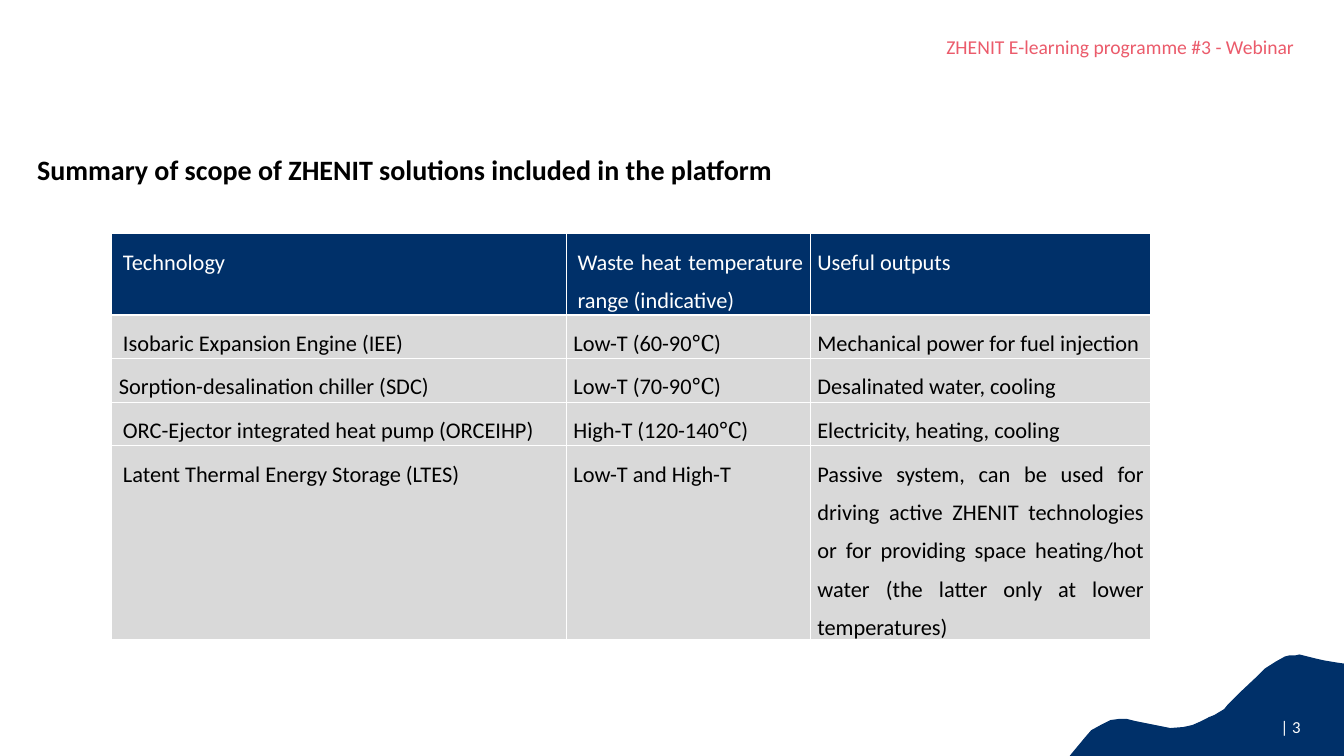
from dataclasses import dataclass

from lxml.etree import SubElement
from pptx import Presentation
from pptx.dml.color import RGBColor as Rgb
from pptx.enum.text import MSO_ANCHOR as Anchor, MSO_AUTO_SIZE as Auto, PP_ALIGN as Align
from pptx.oxml.ns import qn
from pptx.util import Inches, Pt

HUES = {"navy": "003069", "coral": "EB5B6B", "grey": "D9D9D9", "white": "FFFFFF", "black": "000000"}
WIDE, HIGH = Inches(40 / 3), Inches(7.5)
UNIT = HIGH / 75
FACE = "Calibri"


@dataclass
class Label:
    text: str
    col: float
    row: float
    cols: float
    rows: float
    size: int
    hue: str
    align: Align = Align.RIGHT
    bold: bool = False


LABELS = [
    Label("ZHENIT E-learning programme #3 - Webinar", 62, 3, 67.4, 5.7, 14, "coral"),
    Label(" | 3 ", 114.2, 70.6, 16.2, 3, 12, "white"),
    Label("Summary of scope of ZHENIT solutions included in the platform",
          2.7, 14.6, 129.6, 4.4, 20, "black", Align.LEFT, True),
]

WAVE = [
    (1072, 750), (1333, 750), (1333, 659), (1326, 658), (1314, 656), (1305, 654),
    (1297, 652), (1293, 651), (1289, 650), (1285, 651), (1279, 651), (1275, 652),
    (1266, 657), (1255, 664), (1246, 673), (1229, 689), (1219, 699), (1215, 704),
    (1205, 710), (1200, 712), (1190, 717), (1183, 720), (1174, 722), (1161, 723),
    (1136, 718), (1126, 716), (1118, 714), (1110, 714), (1102, 715), (1094, 719),
    (1083, 725), (1077, 732), (1062, 750),
]

COLS = [45.1, 24.2, 33.8]
ROWS = [7.1, 3.9, 3.9, 3.9, 16.9]
CELLS = [
    ["Technology", "Waste heat temperature range (indicative)", "Useful outputs"],
    ["Isobaric Expansion Engine (IEE)", "Low-T (60-90℃)", "Mechanical power for fuel injection"],
    ["Sorption-desalination chiller (SDC)", "Low-T (70-90℃)", "Desalinated water, cooling"],
    ["ORC-Ejector integrated heat pump (ORCEIHP)", "High-T (120-140℃)", "Electricity, heating, cooling"],
    ["Latent Thermal Energy Storage (LTES)", "Low-T and High-T",
     "Passive system, can be used for driving active ZHENIT technologies or for providing "
     "space heating/hot water (the latter only at lower temperatures)"],
]
INDENTS = {(0, 0), (0, 1), (1, 0), (3, 0), (4, 0)}


def span(count: float) -> int:
    return round(count * UNIT)


def tint(name: str) -> Rgb:
    return Rgb.from_string(HUES[name])


def style(para, size: int, hue: str, bold: bool = False) -> None:
    font = para.font
    font.name, font.size, font.bold = FACE, Pt(size), bold
    font.color.rgb = tint(hue)


def write(slide, label: Label) -> None:
    box = slide.shapes.add_textbox(*map(span, (label.col, label.row, label.cols, label.rows)))
    frame = box.text_frame
    frame.word_wrap = True
    frame.auto_size = Auto.SHAPE_TO_FIT_TEXT
    para = frame.paragraphs[0]
    para.add_run().text = label.text
    para.alignment = label.align
    style(para, label.size, label.hue, label.bold)


def draw_wave(slide) -> None:
    path = slide.shapes.build_freeform(*WAVE[0], scale=UNIT / 10)
    path.add_line_segments(WAVE[1:], close=True)
    wave = path.convert_to_shape()
    wave.shadow.inherit = False
    wave.fill.solid()
    wave.fill.fore_color.rgb = tint("navy")
    wave.line.color.rgb = tint("navy")
    wave.line.width = Pt(1)


def edge(cell) -> None:
    props = cell._tc.get_or_add_tcPr()
    for spot, side in enumerate(("lnL", "lnR", "lnT", "lnB")):
        line = SubElement(props, qn(f"a:{side}"), w=str(Pt(1)))
        fill = SubElement(line, qn("a:solidFill"))
        SubElement(fill, qn("a:srgbClr"), val=HUES["white"])
        props.insert(spot, line)


def fill_cell(cell, row: int, col: int) -> None:
    head = row == 0
    cell.fill.solid()
    cell.fill.fore_color.rgb = tint("navy" if head else "grey")
    edge(cell)
    cell.margin_left = cell.margin_right = span(0.7)
    cell.margin_top, cell.margin_bottom = span(0.4), span(0.2)
    cell.vertical_anchor = Anchor.MIDDLE if col == 2 and not head else Anchor.TOP
    para = cell.text_frame.paragraphs[0]
    before, sign, after = CELLS[row][col].partition("℃")
    for part in filter(None, (before, sign, after)):
        run = para.add_run()
        run.text = part
        if part == "℃":
            run.font.name = "Cambria"
    para.alignment = Align.JUSTIFY
    para.line_spacing = 1.4
    para.space_after = Pt(6)
    if (row, col) in INDENTS:
        props = para._p.get_or_add_pPr()
        props.set("marL", str(span(0.4)))
        props.set("indent", "0")
    style(para, 16, "white" if head else "black")


def draw_table(slide) -> None:
    size = span(sum(COLS)), span(sum(ROWS))
    table = slide.shapes.add_table(len(ROWS), len(COLS), span(11.1), span(23.2), *size).table
    table.first_row = table.horz_banding = False
    for col, width in enumerate(COLS):
        table.columns[col].width = span(width)
    for row, height in enumerate(ROWS):
        table.rows[row].height = span(height)
        for col in range(len(COLS)):
            fill_cell(table.cell(row, col), row, col)


def main() -> None:
    deck = Presentation()
    deck.slide_width, deck.slide_height = WIDE, HIGH
    slide = deck.slides.add_slide(deck.slide_layouts[6])
    draw_wave(slide)
    for label in LABELS:
        write(slide, label)
    draw_table(slide)
    deck.save("out.pptx")


if __name__ == "__main__":
    main()
